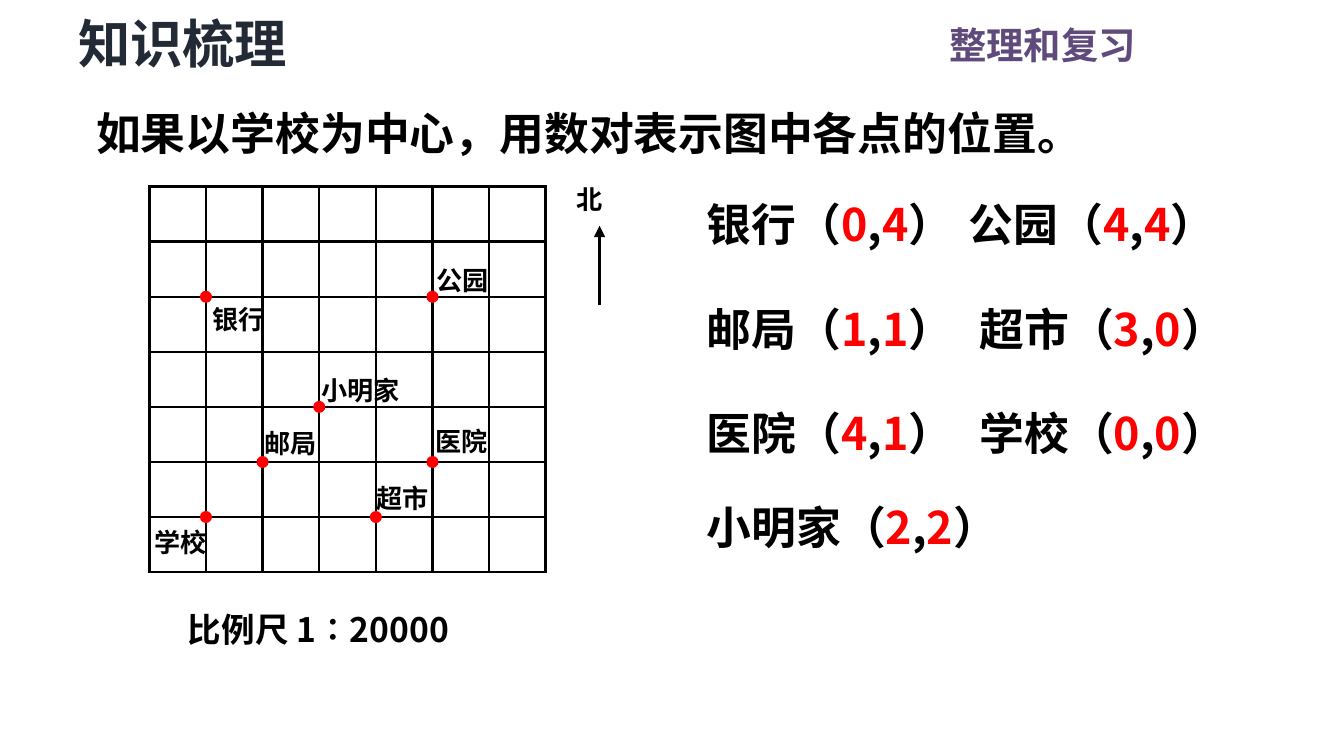
from lxml.etree import SubElement
from pptx import Presentation
from pptx.dml.color import RGBColor
from pptx.enum.shapes import MSO_CONNECTOR, MSO_SHAPE
from pptx.enum.text import MSO_ANCHOR, PP_ALIGN
from pptx.oxml.ns import qn
from pptx.util import Pt

FONT = "Noto Sans CJK SC"
BLACK = RGBColor(0x00, 0x00, 0x00)
WHITE = RGBColor(0xFF, 0xFF, 0xFF)
RED = RGBColor(0xFF, 0x00, 0x00)
PURPLE = RGBColor(0x60, 0x4A, 0x7B)
NAVY = RGBColor(0x22, 0x2A, 0x35)

GRID_COUNT = 7
COLUMN_WIDTH, ROW_HEIGHT = 30.34, 29.5
SCHOOL_COLUMN, SCHOOL_ROW = 1, 6
DOT_SIZE = 6.5

# place: pair (east, north of the school), label box (left, top, width) in the map,
# answer box (left, top, width) in the answer area
PLACES = {
    "银行": ((0, 4), (26.6, 57.6, 57), (0, 0, 149)),
    "公园": ((4, 4), (146.9, 36.7, 42.5), (140.4, 0, 149)),
    "邮局": ((1, 1), (54.7, 123.8, 48), (0, 56.2, 149)),
    "超市": ((3, 0), (114.5, 153.4, 47.5), (146.2, 56.2, 149)),
    "医院": ((4, 1), (146.2, 123.1, 42.5), (0, 112.4, 149)),
    "学校": ((0, 0), (-4.3, 177.1, 52.5), (146.2, 112.4, 149)),
    "小明家": ((2, 2), (85, 95.8, 60), (0, 162.7, 172.8)),
}


def write_text(shape, parts, size, color=BLACK, align=PP_ALIGN.LEFT):
    """Fill a shape with one bold paragraph; parts are (text, colour or None)."""
    frame = shape.text_frame
    frame.word_wrap = True
    frame.margin_top = Pt(3.6 + round(0.09 * size, 1))
    paragraph = frame.paragraphs[0]
    paragraph.alignment = align
    paragraph.line_spacing = Pt(round(1.2 * size, 1))
    for text, part_color in parts:
        run = paragraph.add_run()
        run.text = text
        if part_color is not None:
            run.font.color.rgb = part_color
    font = paragraph.font
    font.size, font.bold, font.name = Pt(size), True, FONT
    font.color.rgb = color
    properties = paragraph._p.pPr.find(qn("a:defRPr"))
    SubElement(properties, qn("a:ea")).set("typeface", FONT)


def add_text(slide, left, top, width, parts, size, **style):
    height = round(1.2 * size + 7.2, 1)
    box = slide.shapes.add_textbox(Pt(left), Pt(top), Pt(width), Pt(height))
    write_text(box, parts, size, **style)


def add_header(slide, left, top):
    add_text(slide, left + 380, top + 6.5, 198.7, [("整理和复习", None)], 20,
             color=PURPLE, align=PP_ALIGN.RIGHT)
    add_text(slide, left - 2.2, top, 150, [("知识梳理", None)], 28, color=NAVY)


def add_question(slide, left, top, width, height):
    callout = slide.shapes.add_shape(MSO_SHAPE.ROUNDED_RECTANGULAR_CALLOUT,
                                     Pt(left), Pt(top), Pt(width), Pt(height))
    for index, value in enumerate((0.28, 0.09, 0.17)):
        callout.adjustments[index] = value
    callout.shadow.inherit = False
    callout.fill.solid()
    callout.fill.fore_color.rgb = WHITE
    callout.line.fill.background()
    write_text(callout, [("如果以学校为中心，用数对表示图中各点的位置。", None)], 24)
    callout.text_frame.vertical_anchor = MSO_ANCHOR.MIDDLE


def set_borders(cell):
    properties = cell._tc.get_or_add_tcPr()
    for position, side in enumerate(("lnL", "lnR", "lnT", "lnB")):
        line = properties.makeelement(qn(f"a:{side}"), {"w": str(Pt(1.5))})
        fill = SubElement(line, qn("a:solidFill"))
        SubElement(fill, qn("a:srgbClr")).set("val", str(BLACK))
        properties.insert(position, line)


def add_grid(slide, left, top):
    table = slide.shapes.add_table(
        GRID_COUNT, GRID_COUNT, Pt(left), Pt(top),
        Pt(GRID_COUNT * COLUMN_WIDTH), Pt(GRID_COUNT * ROW_HEIGHT)).table
    table.first_row = table.horz_banding = False
    for column in table.columns:
        column.width = Pt(COLUMN_WIDTH)
    for row in table.rows:
        row.height = Pt(ROW_HEIGHT)
    for cell in table.iter_cells():
        cell.margin_top = cell.margin_bottom = 0
        cell.text_frame.paragraphs[0].font.size = Pt(10)
        cell.fill.background()
        set_borders(cell)


def add_dot(slide, center_x, center_y):
    dot = slide.shapes.add_shape(
        MSO_SHAPE.OVAL, Pt(center_x - DOT_SIZE / 2), Pt(center_y - DOT_SIZE / 2),
        Pt(DOT_SIZE), Pt(DOT_SIZE))
    dot.shadow.inherit = False
    dot.fill.solid()
    dot.fill.fore_color.rgb = RED
    dot.line.fill.background()


def add_north_arrow(slide, left, top):
    add_text(slide, left, top, 40.3, [("北", None)], 14)
    x = Pt(left + 19.5)
    arrow = slide.shapes.add_connector(MSO_CONNECTOR.STRAIGHT,
                                       x, Pt(top + 70), x, Pt(top + 27.5))
    arrow.line.color.rgb = BLACK
    arrow.line.width = Pt(2)
    SubElement(arrow.line._get_or_add_ln(), qn("a:tailEnd")).set("type", "triangle")
    SubElement(arrow._element.spPr, qn("a:effectLst"))


def add_map(slide, left, top):
    add_north_arrow(slide, left + 221.7, top - 6.5)
    add_text(slide, left + 13.6, top + 221, 201, [("比例尺 1∶20000", None)], 18)
    add_grid(slide, left, top)
    for (east, north), _, _ in PLACES.values():
        add_dot(slide, left + (SCHOOL_COLUMN + east) * COLUMN_WIDTH,
                top + (SCHOOL_ROW - north) * ROW_HEIGHT)
    for name, (_, (x, y, width), _) in PLACES.items():
        add_text(slide, left + x, top + y, width, [(name, None)], 14)


def add_answers(slide, left, top):
    for name, ((east, north), _, (x, y, width)) in PLACES.items():
        parts = [(f"{name}（", None), (str(east), RED), (",", None),
                 (str(north), RED), ("）", None)]
        add_text(slide, left + x, top + y, width, parts, 24)


def main():
    presentation = Presentation()
    presentation.slide_width, presentation.slide_height = Pt(720), Pt(405)
    slide = presentation.slides.add_slide(presentation.slide_layouts[6])
    add_header(slide, 37, 0)
    add_question(slide, 42.5, 49.7, 561.6, 40.3)
    add_map(slide, 80, 100)
    add_answers(slide, 371.5, 99.4)
    presentation.save("out.pptx")


if __name__ == "__main__":
    main()
